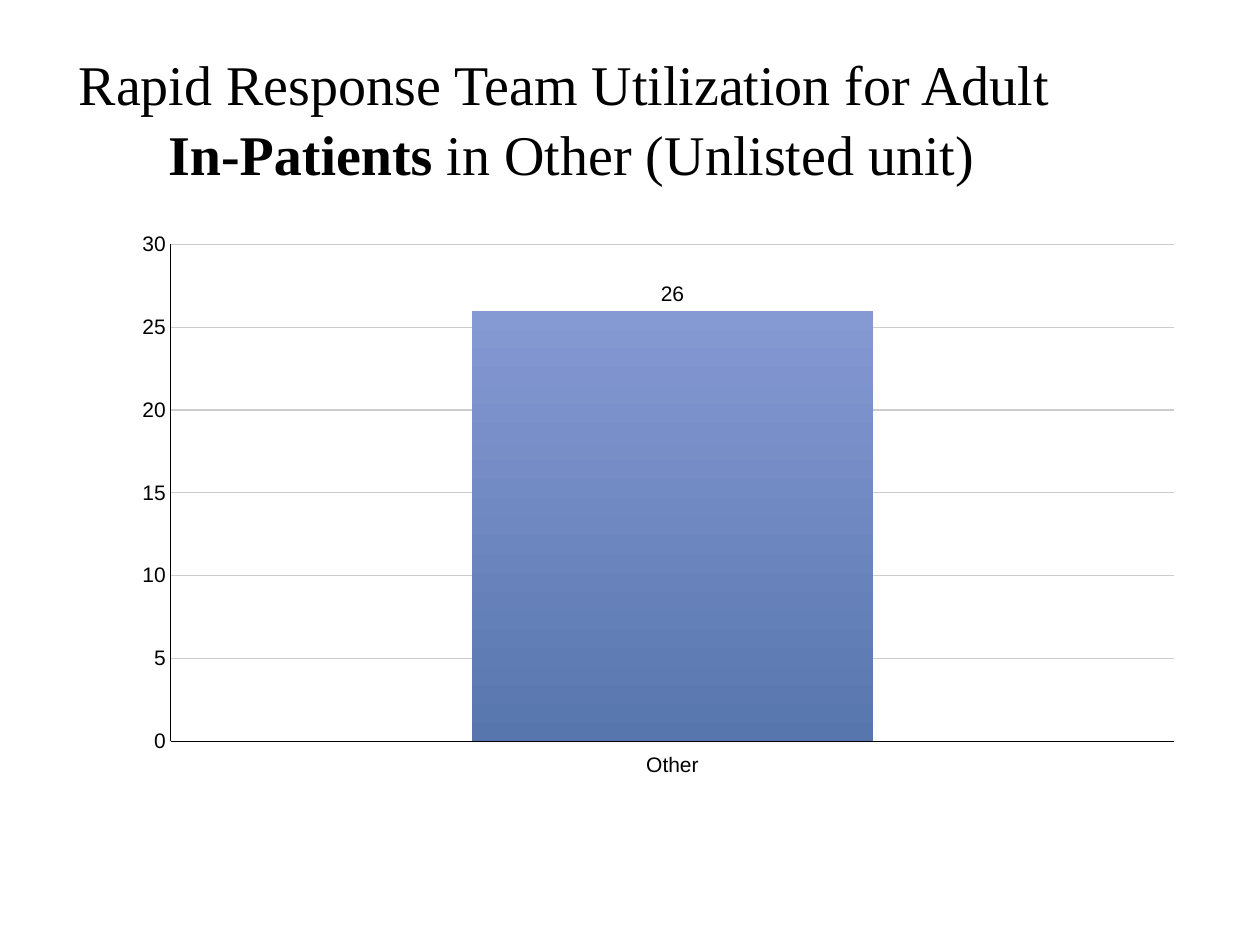
from lxml import etree
from pptx import Presentation
from pptx.chart.data import CategoryChartData
from pptx.dml.color import RGBColor
from pptx.enum.chart import XL_CHART_TYPE as ChartType
from pptx.enum.chart import XL_LABEL_POSITION as LabelPosition
from pptx.enum.chart import XL_TICK_LABEL_POSITION as TickLabelPosition
from pptx.enum.chart import XL_TICK_MARK as TickMark
from pptx.enum.text import MSO_ANCHOR, PP_ALIGN
from pptx.oxml.ns import qn
from pptx.util import Cm, Pt

COLORS = {
    "text": "000000",
    "grid": "CCCCCC",
    "bar_top": "8599D3",
    "bar_bottom": "5876AE",
}


def color(name):
    return RGBColor.from_string(COLORS[name])


def style_font(font, name, size):
    font.name = name
    font.size = Pt(size)
    font.color.rgb = color("text")


presentation = Presentation()
presentation.slide_width = Cm(25.4)
presentation.slide_height = Cm(19.05)
slide = presentation.slides.add_slide(presentation.slide_layouts[6])

# Title
title = slide.shapes.add_textbox(Cm(1.27), Cm(0.76), Cm(20.22), Cm(3.18))
title_frame = title.text_frame
title_frame.word_wrap = True
title_frame.vertical_anchor = MSO_ANCHOR.MIDDLE
paragraph = title_frame.paragraphs[0]
paragraph.alignment = PP_ALIGN.CENTER
paragraph.line_spacing = 1.04
style_font(paragraph.font, "Times New Roman", 32)
paragraph.add_run().text = "Rapid Response Team Utilization for Adult"
paragraph.add_line_break()
patients_run = paragraph.add_run()
patients_run.text = " In-Patients "
patients_run.font.bold = True
paragraph.add_run().text = "in Other (Unlisted unit)"

# Column chart
chart_data = CategoryChartData(number_format="#0")
chart_data.categories = ["Other"]
chart_data.add_series("Series 1", [26])
chart = slide.shapes.add_chart(
    ChartType.COLUMN_CLUSTERED, Cm(1.27), Cm(4.45), Cm(22.86), Cm(12.57), chart_data
).chart
chart.has_legend = False
chart.has_title = False
style_font(chart.font, "Arial", 12)

# Inner plot area as fractions of the chart frame
plot_area = chart.plots[0]._element.getparent()
layout = plot_area.find(qn("c:layout"))
if layout is None:
    layout = etree.Element(qn("c:layout"))
    plot_area.insert(0, layout)
manual_layout = etree.SubElement(layout, qn("c:manualLayout"))
for tag, value in [
    ("layoutTarget", "inner"), ("xMode", "edge"), ("yMode", "edge"),
    ("x", "0.095"), ("y", "0.038"), ("w", "0.885"), ("h", "0.797"),
]:
    etree.SubElement(manual_layout, qn(f"c:{tag}")).set("val", value)

# Axes
for axis in (chart.category_axis, chart.value_axis):
    axis.major_tick_mark = TickMark.NONE
    axis.minor_tick_mark = TickMark.NONE
    axis.format.line.color.rgb = color("text")
    axis.format.line.width = Pt(0)
    style_font(axis.tick_labels.font, "Arial", 12)
chart.category_axis.tick_label_position = TickLabelPosition.LOW

value_axis = chart.value_axis
value_axis.minimum_scale = 0
value_axis.maximum_scale = 30
value_axis.major_unit = 5
value_axis.tick_labels.number_format = "#0"
value_axis.tick_labels.number_format_is_linked = False
value_axis.has_major_gridlines = True
value_axis.major_gridlines.format.line.color.rgb = color("grid")
value_axis.major_gridlines.format.line.width = Pt(0)

# Bar and its value label
plot = chart.plots[0]
plot.gap_width = 150
plot.vary_by_categories = False
bar_fill = plot.series[0].format.fill
bar_fill.gradient()
bar_fill.gradient_angle = 270
for stop, name in zip(bar_fill.gradient_stops, ("bar_top", "bar_bottom")):
    stop.color.rgb = color(name)

plot.has_data_labels = True
labels = plot.data_labels
labels.show_value = True
labels.position = LabelPosition.OUTSIDE_END
labels.number_format = "#0"
labels.number_format_is_linked = False
style_font(labels.font, "Arial", 12)

presentation.save("out.pptx")
